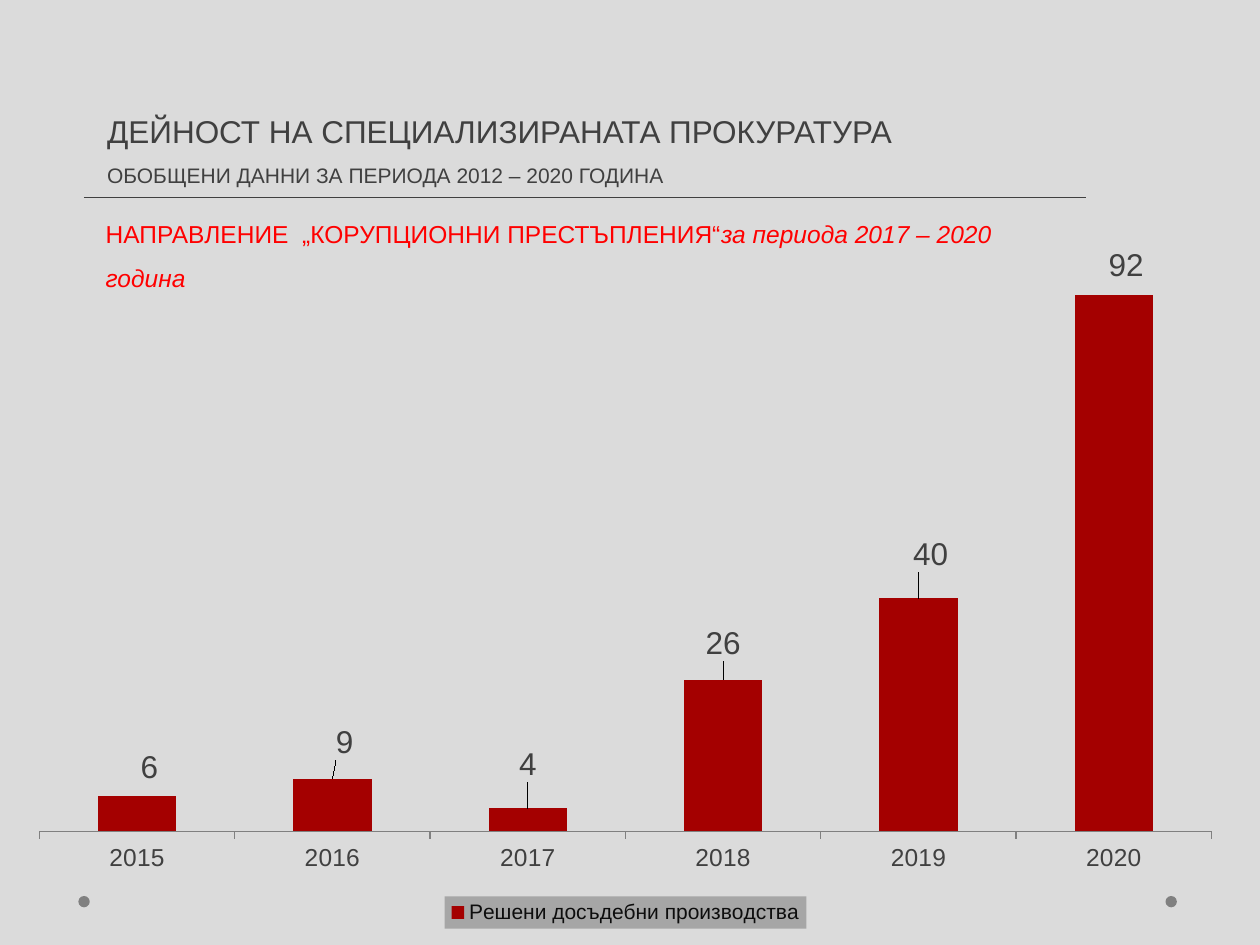
from lxml.etree import SubElement
from pptx import Presentation
from pptx.chart.data import CategoryChartData
from pptx.dml.color import RGBColor
from pptx.enum.chart import XL_CHART_TYPE, XL_LABEL_POSITION, XL_LEGEND_POSITION, XL_TICK_MARK
from pptx.enum.shapes import MSO_CONNECTOR, MSO_SHAPE
from pptx.enum.text import MSO_ANCHOR, PP_ALIGN
from pptx.oxml import parse_xml
from pptx.oxml.ns import nsdecls, qn
from pptx.util import Pt

BACKGROUND = RGBColor(0xDB, 0xDB, 0xDB)
DARK = RGBColor(0x40, 0x40, 0x40)
GRAY = RGBColor(0x80, 0x80, 0x80)
RED = RGBColor(0xFF, 0x00, 0x00)
BAR = RGBColor(0xA4, 0x00, 0x00)
LEGEND_TEXT = RGBColor(0x0D, 0x0D, 0x0D)
FONT = "Arial"

TITLE = [
    [("ДЕЙНОСТ НА СПЕЦИАЛИЗИРАНАТА ПРОКУРАТУРА", 18, DARK, False)],
    [("ОБОБЩЕНИ ДАННИ ЗА ПЕРИОДА 2012 – 2020 ГОДИНА", 12, DARK, False)],
]
HEADING = [[
    ("НАПРАВЛЕНИЕ  „КОРУПЦИОННИ ПРЕСТЪПЛЕНИЯ“", 14, RED, False),
    ("за периода 2017 – 2020 година", 14, RED, True),
]]
SERIES = "Решени досъдебни производства"
CASES = [("2015", 6), ("2016", 9), ("2017", 4), ("2018", 26), ("2019", 40), ("2020", 92)]
LABEL_SHIFTS = [(0.01, -0.01), (0.01, -0.02), (0, -0.03), (0, -0.02), (0.01, -0.03), (0.01, -0.01)]
PLOT_AREA = {"x": 0.02, "y": 0.02, "w": 0.96, "h": 0.84}
DOTS = [(44.8, 512), (666, 512)]
DOT_SIZE = 6.5


def style(font, size, color, italic=False):
    font.name, font.size, font.italic = FONT, Pt(size), italic
    font.color.rgb = color


def write(tf, paragraphs, anchor):
    tf.word_wrap = True
    tf.vertical_anchor = anchor
    for i, runs in enumerate(paragraphs):
        p = tf.add_paragraph() if i else tf.paragraphs[0]
        p.alignment = PP_ALIGN.LEFT
        p.line_spacing = 1.5
        p.space_before = Pt(0)
        for text, size, color, italic in runs:
            r = p.add_run()
            r.text = text
            style(r.font, size, color, italic)


def manual_layout(values, inner=False):
    layout = parse_xml(f"<c:layout {nsdecls('c')}><c:manualLayout/></c:layout>")
    settings = [("layoutTarget", "inner"), ("xMode", "edge"), ("yMode", "edge")] if inner else []
    for tag, value in settings + list(values.items()):
        SubElement(layout[0], qn(f"c:{tag}")).set("val", str(value))
    return layout


prs = Presentation()
prs.slide_width, prs.slide_height = Pt(720), Pt(540)
s = prs.slides.add_slide(prs.slide_layouts[5])
s.background.fill.solid()
s.background.fill.fore_color.rgb = BACKGROUND

for x, y in DOTS:
    dot = s.shapes.add_shape(MSO_SHAPE.OVAL, Pt(x), Pt(y), Pt(DOT_SIZE), Pt(DOT_SIZE))
    dot.shadow.inherit = False
    dot.fill.solid()
    dot.fill.fore_color.rgb = GRAY
    dot.line.fill.background()

title = s.shapes.title
title.left, title.top, title.width, title.height = Pt(54), Pt(49), Pt(533), Pt(62)
write(title.text_frame, TITLE, MSO_ANCHOR.MIDDLE)

heading = s.shapes.add_textbox(Pt(53.3), Pt(113), Pt(567), Pt(58))
write(heading.text_frame, HEADING, MSO_ANCHOR.TOP)

rule = s.shapes.add_connector(MSO_CONNECTOR.STRAIGHT, Pt(48), Pt(113), Pt(620.5), Pt(113))
rule.line.color.rgb = DARK
rule.line.width = Pt(0.75)
SubElement(rule._element.spPr, qn("a:effectLst"))

data = CategoryChartData()
data.categories = [year for year, _ in CASES]
data.add_series(SERIES, [count for _, count in CASES])
chart = s.shapes.add_chart(
    XL_CHART_TYPE.COLUMN_CLUSTERED, Pt(8.6), Pt(134), Pt(697.7), Pt(396.7), data
).chart
chart.has_title = False
style(chart.font, 18, DARK)

plot = chart.plots[0]
plot.gap_width = 150
plot.vary_by_categories = False
bars = plot.series[0]
bars.format.fill.solid()
bars.format.fill.fore_color.rgb = BAR
for i, (dx, dy) in enumerate(LABEL_SHIFTS):
    label = bars.points[i].data_label
    style(label.font, 18, DARK)
    label.position = XL_LABEL_POSITION.OUTSIDE_END
for label, (dx, dy) in zip(bars._element.xpath(".//c:dLbl"), LABEL_SHIFTS):
    label.insert(1, manual_layout({"x": dx, "y": dy}))

years = chart.category_axis
style(years.tick_labels.font, 14, DARK)
years.format.line.color.rgb = GRAY
years.major_tick_mark = XL_TICK_MARK.OUTSIDE
counts = chart.value_axis
counts.minimum_scale, counts.maximum_scale = 0, 100
counts.has_major_gridlines = False
counts.visible = False

plot_area = chart._chartSpace.chart.plotArea
for old in plot_area.findall(qn("c:layout")):
    plot_area.remove(old)
plot_area.insert(0, manual_layout(PLOT_AREA, inner=True))

chart.has_legend = True
legend = chart.legend
legend.position = XL_LEGEND_POSITION.BOTTOM
legend.include_in_layout = False
style(legend.font, 12, LEGEND_TEXT)
legend._element.find(qn("c:overlay")).addnext(parse_xml(
    f'<c:spPr {nsdecls("c", "a")}><a:solidFill><a:srgbClr val="A6A6A6"/></a:solidFill></c:spPr>'
))

prs.save("out.pptx")
